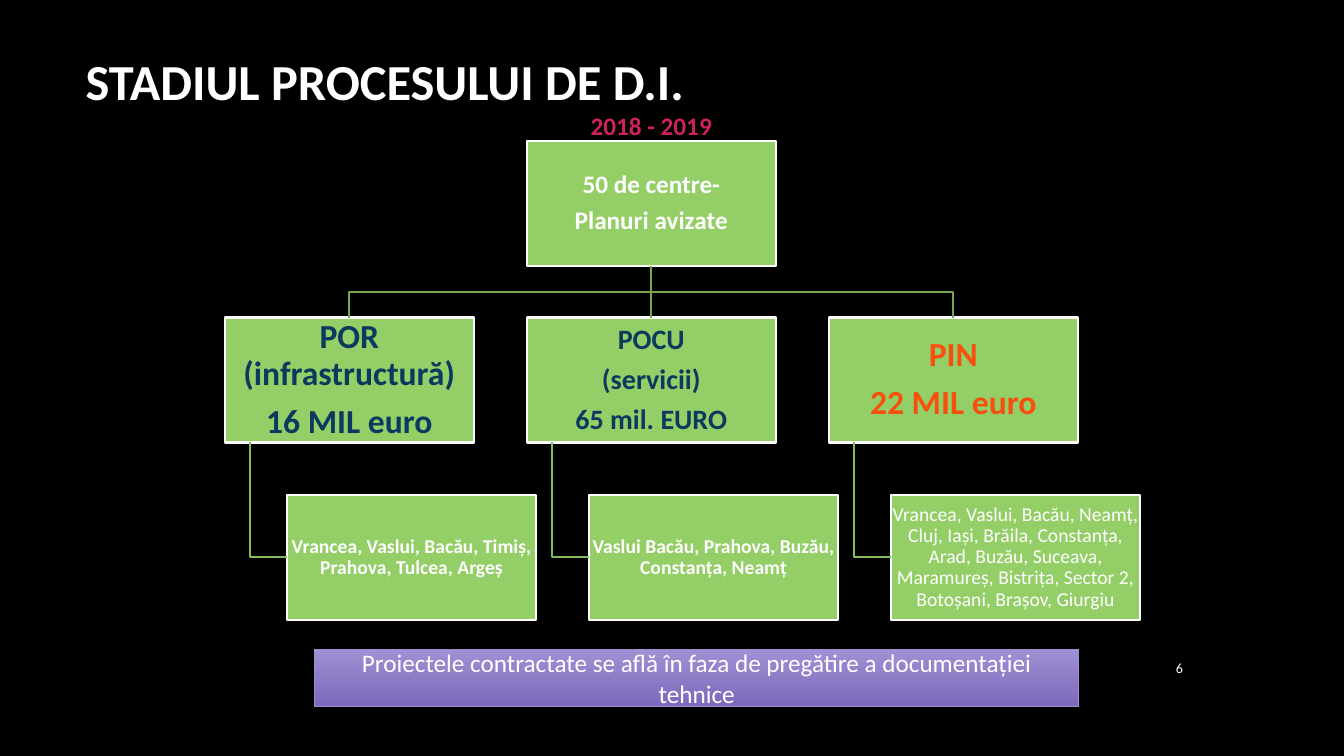
from pptx import Presentation
from pptx.dml.color import RGBColor
from pptx.enum.shapes import MSO_CONNECTOR, MSO_SHAPE
from pptx.enum.text import MSO_ANCHOR, PP_ALIGN
from pptx.oxml.ns import qn
from pptx.util import Inches, Pt
from lxml import etree

RECT, STRAIGHT = MSO_SHAPE.RECTANGLE, MSO_CONNECTOR.STRAIGHT
MIDDLE, TOP = MSO_ANCHOR.MIDDLE, MSO_ANCHOR.TOP
LEFT, CENTER, RIGHT = PP_ALIGN.LEFT, PP_ALIGN.CENTER, PP_ALIGN.RIGHT

# Content
TITLE = "STADIUL PROCESULUI DE D.I."
PERIOD = "2018 - 2019"
ROOT = ["50 de centre-", "Planuri avizate"]
PROGRAMMES = [
    {"name": ["POR (infrastructură)", "16 MIL euro"], "size": 24, "color": "0C395E",
     "counties": "Vrancea, Vaslui, Bacău, Timiș, Prahova, Tulcea, Argeș", "bold": True},
    {"name": ["POCU", "(servicii)", "65 mil. EURO"], "size": 20, "color": "0C395E",
     "counties": "Vaslui Bacău, Prahova, Buzău, Constanța, Neamț", "bold": True},
    {"name": ["PIN", "22 MIL euro"], "size": 24, "color": "F64F0E",
     "counties": "Vrancea, Vaslui, Bacău, Neamț, Cluj, Iași, Brăila, Constanța, Arad, "
                 "Buzău, Suceava, Maramureș, Bistrița, Sector 2, Botoșani, Brașov, Giurgiu",
     "bold": False},
]
STATUS = "Proiectele contractate se află în faza de pregătire a documentației tehnice"
PAGE = "6"

# Layout of the chart, in inches
BOX_W, BOX_H = 2.47, 1.24
FIRST_X, LAST_X = 2.23, 8.22
ROOT_Y, PROGRAMME_Y, COUNTY_Y = 1.4, 3.15, 4.91
PITCH = (LAST_X - FIRST_X) / (len(PROGRAMMES) - 1)
ROOT_X = FIRST_X + PITCH

WHITE, GREEN = "FFFFFF", "94CE67"
BRANCH, TWIG = "77A552", "86BB5D"

prs = Presentation()
prs.slide_width, prs.slide_height = Inches(13.33), Inches(7.5)
s = prs.slides.add_slide(prs.slide_layouts[6])


def rgb(value):
    return RGBColor.from_string(value)


def write(sp, lines, size, color=WHITE, bold=False, align=CENTER, anchor=MIDDLE):
    tf = sp.text_frame
    tf.word_wrap = True
    tf.vertical_anchor = anchor
    for i, line in enumerate(lines):
        p = tf.paragraphs[0] if i == 0 else tf.add_paragraph()
        p.alignment = align
        r = p.add_run()
        r.text = line
        r.font.name, r.font.size, r.font.bold = "Calibri", Pt(size), bold
        r.font.color.rgb = rgb(color)
    return tf


def add_label(x, y, w, h, text, size, **style):
    sp = s.shapes.add_textbox(Inches(x), Inches(y), Inches(w), Inches(h))
    write(sp, [text], size, **style)


def add_rect(x, y, w, h, line, width):
    sp = s.shapes.add_shape(RECT, Inches(x), Inches(y), Inches(w), Inches(h))
    sp.shadow.inherit = False
    sp.line.color.rgb, sp.line.width = rgb(line), Pt(width)
    return sp


def add_box(x, y, lines, size, color=WHITE, bold=True):
    sp = add_rect(x, y, BOX_W, BOX_H, WHITE, 1.5)
    sp.fill.solid()
    sp.fill.fore_color.rgb = rgb(GREEN)
    tf = write(sp, lines, size, color, bold)
    inset = Inches(0.02 if size >= 24 else 0.01)
    tf.margin_left = tf.margin_right = tf.margin_top = tf.margin_bottom = inset
    for p in tf.paragraphs:
        p.line_spacing = 0.9
        p.space_after = Pt(round(0.35 * size, 1))
    return sp


def add_elbow(points, color):
    points = [(Inches(x), Inches(y)) for x, y in points]
    fb = s.shapes.build_freeform(*points[0])
    fb.add_line_segments(points[1:], close=False)
    sp = fb.convert_to_shape()
    sp.shadow.inherit = False
    sp.fill.background()
    sp.line.color.rgb, sp.line.width = rgb(color), Pt(1.5)


# Background and headings
s.background.fill.solid()
s.background.fill.fore_color.rgb = rgb("000000")
add_label(0.75, 0, 11.08, 1.59, TITLE, 36, bold=True, align=LEFT)

# Organisation chart
root = add_box(ROOT_X, ROOT_Y, ROOT, 18)
root_mid, root_bottom = ROOT_X + BOX_W / 2, ROOT_Y + BOX_H
bus_y = (root_bottom + PROGRAMME_Y) / 2
county_mid = COUNTY_Y + BOX_H / 2

for i, prog in enumerate(PROGRAMMES):
    x = FIRST_X + i * PITCH
    mid, spine, county_x = x + BOX_W / 2, x + BOX_W / 10, x + BOX_W / 4
    box = add_box(x, PROGRAMME_Y, prog["name"], prog["size"], prog["color"])
    add_box(county_x, COUNTY_Y, [prog["counties"]], 14, bold=prog["bold"])
    add_elbow([(spine, PROGRAMME_Y + BOX_H), (spine, county_mid), (county_x, county_mid)], TWIG)
    if i == 1:  # directly below the root
        link = s.shapes.add_connector(STRAIGHT, 0, 0, 0, 0)
        link.begin_connect(root, 2)
        link.end_connect(box, 0)
        link.line.color.rgb, link.line.width = rgb(BRANCH), Pt(1.5)
        etree.SubElement(link._element.spPr, qn("a:effectLst"))
    else:
        add_elbow([(root_mid, root_bottom), (root_mid, bus_y), (mid, bus_y),
                   (mid, PROGRAMME_Y)], BRANCH)

# Page number, period and status bar
add_label(11.23, 6.42, 0.6, 0.41, PAGE, 10, align=RIGHT)
add_label(4.79, 1.05, 3.34, 0.4, PERIOD, 18, color="CE225C", bold=True, anchor=TOP)

bar = add_rect(3.12, 6.44, 7.58, 0.57, "9D8CD3", 0.75)
bar.fill.gradient()
bar.fill.gradient_angle = 270
for stop, color in zip(bar.fill.gradient_stops, ("A090D4", "7D69BB")):
    stop.color.rgb = rgb(color)
write(bar, [STATUS], 18)

prs.save("out.pptx")
